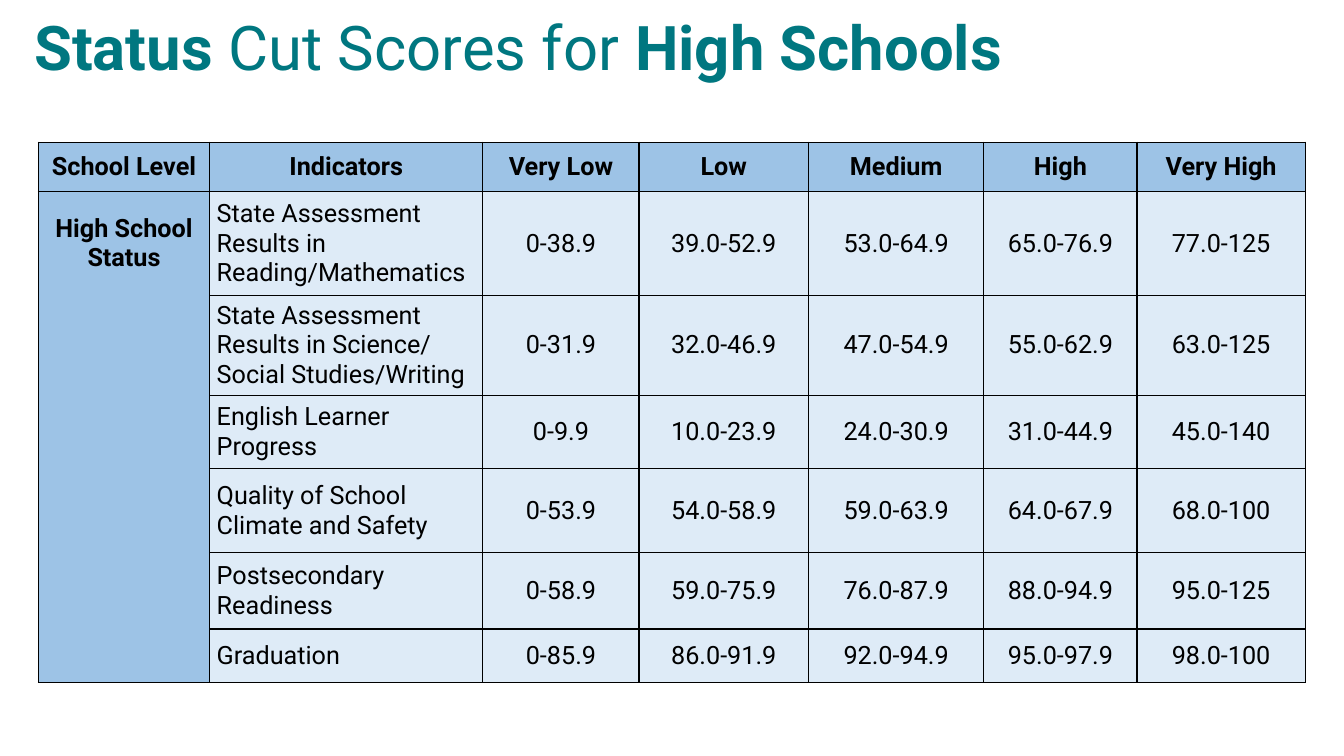
"""Build a slide with the status cut scores for high schools."""
from dataclasses import dataclass

from lxml.etree import SubElement
from pptx import Presentation
from pptx.dml.color import RGBColor
from pptx.enum.text import MSO_ANCHOR, PP_ALIGN
from pptx.oxml.ns import qn
from pptx.slide import Slide
from pptx.table import _Cell
from pptx.text.text import _Paragraph
from pptx.util import Pt

FONT = "Roboto"
TEAL = RGBColor(0x00, 0x77, 0x80)
BLACK = RGBColor(0x00, 0x00, 0x00)
BLUE = RGBColor(0x9D, 0xC3, 0xE6)
PALE = RGBColor(0xDE, 0xEB, 0xF7)

HEADS = ["School Level", "Indicators", "Very Low", "Low", "Medium", "High", "Very High"]
WIDTHS = [122.4, 195.1, 111.6, 121, 125.3, 109.4, 120.2]
HEAD_HIGH = 35.3


@dataclass(frozen=True)
class Band:
    """One row of cut scores."""
    label: str
    high: float
    scores: list[str]


BANDS = [
    Band("State Assessment Results in Reading/Mathematics", 74.2,
         ["0-38.9", "39.0-52.9", "53.0-64.9", "65.0-76.9", "77.0-125"]),
    Band("State Assessment Results in Science/\nSocial Studies/Writing", 71.3,
         ["0-31.9", "32.0-46.9", "47.0-54.9", "55.0-62.9", "63.0-125"]),
    Band("English Learner Progress", 52.6,
         ["0-9.9", "10.0-23.9", "24.0-30.9", "31.0-44.9", "45.0-140"]),
    Band("Quality of School Climate and Safety", 59.8,
         ["0-53.9", "54.0-58.9", "59.0-63.9", "64.0-67.9", "68.0-100"]),
    Band("Postsecondary Readiness", 54.7,
         ["0-58.9", "59.0-75.9", "76.0-87.9", "88.0-94.9", "95.0-125"]),
    Band("Graduation", 38.2,
         ["0-85.9", "86.0-91.9", "92.0-94.9", "95.0-97.9", "98.0-100"]),
]


def add_run(para: _Paragraph, text: str, size: float, color: RGBColor, bold: bool) -> None:
    """Add one styled run to a paragraph."""
    run = para.add_run()
    run.text = text
    run.font.name = FONT
    run.font.size = Pt(size)
    run.font.bold = bold
    run.font.color.rgb = color


def add_title(slide: Slide) -> None:
    """Add the slide title."""
    box = slide.shapes.add_textbox(Pt(-0.7), Pt(-1.4), Pt(954), Pt(75.6))
    frame = box.text_frame
    frame.word_wrap = True
    frame.vertical_anchor = MSO_ANCHOR.MIDDLE
    frame.margin_left = Pt(25.2)
    para = frame.paragraphs[0]
    para.line_spacing = 0.9
    for text, bold in [("Status", True), (" Cut Scores for ", False), ("High Schools", True)]:
        add_run(para, text, 44, TEAL, bold)


def set_lines(cell: _Cell, sides: str) -> None:
    """Draw the named cell sides in black and hide the others."""
    props = cell._tc.get_or_add_tcPr()
    for side in "LRTB":
        line = SubElement(props, qn(f"a:ln{side}"), w=str(Pt(1)))
        if side in sides:
            fill = SubElement(line, qn("a:solidFill"))
            SubElement(fill, qn("a:srgbClr"), val=str(BLACK))
        else:
            SubElement(line, qn("a:noFill"))


def fill_cell(cell: _Cell, paras: list[str], color: RGBColor, bold: bool = False,
              align: PP_ALIGN = PP_ALIGN.CENTER, sides: str = "LRTB") -> None:
    """Set the look and the text of one cell."""
    set_lines(cell, sides)
    cell.fill.solid()
    cell.fill.fore_color.rgb = color
    cell.vertical_anchor = MSO_ANCHOR.MIDDLE
    cell.margin_left = cell.margin_right = Pt(5)
    cell.margin_top = cell.margin_bottom = Pt(0)
    frame = cell.text_frame
    for i, text in enumerate(paras):
        para = frame.add_paragraph() if i else frame.paragraphs[0]
        para.alignment = align
        for j, part in enumerate(text.split("\n")):
            if j:
                para.add_line_break()
            add_run(para, part, 18, BLACK, bold)


def add_scores(slide: Slide) -> None:
    """Add the table of cut scores."""
    highs = [HEAD_HIGH] + [band.high for band in BANDS]
    frame = slide.shapes.add_table(len(highs), len(WIDTHS), Pt(27.4), Pt(101.5),
                                   Pt(sum(WIDTHS)), Pt(sum(highs)))
    table = frame.table
    table.first_row = table.horz_banding = False
    for col, width in zip(table.columns, WIDTHS):
        col.width = Pt(width)
    for row, high in zip(table.rows, highs):
        row.height = Pt(high)
    for c, head in enumerate(HEADS):
        fill_cell(table.cell(0, c), [head], BLUE, bold=True)
    for r, band in enumerate(BANDS, 1):
        level = ["High School", "Status"] if r == 1 else []
        sides = "LR" + ("T" if r == 1 else "") + ("B" if r == len(BANDS) else "")
        fill_cell(table.cell(r, 0), level, BLUE, bold=True, sides=sides)
        fill_cell(table.cell(r, 1), [band.label], PALE, align=PP_ALIGN.LEFT)
        for c, score in enumerate(band.scores, 2):
            fill_cell(table.cell(r, c), [score], PALE)


def main() -> None:
    """Build and save the deck."""
    deck = Presentation()
    deck.slide_width, deck.slide_height = Pt(960), Pt(540)
    slide = deck.slides.add_slide(deck.slide_layouts[6])
    add_title(slide)
    add_scores(slide)
    deck.save("out.pptx")


if __name__ == "__main__":
    main()
